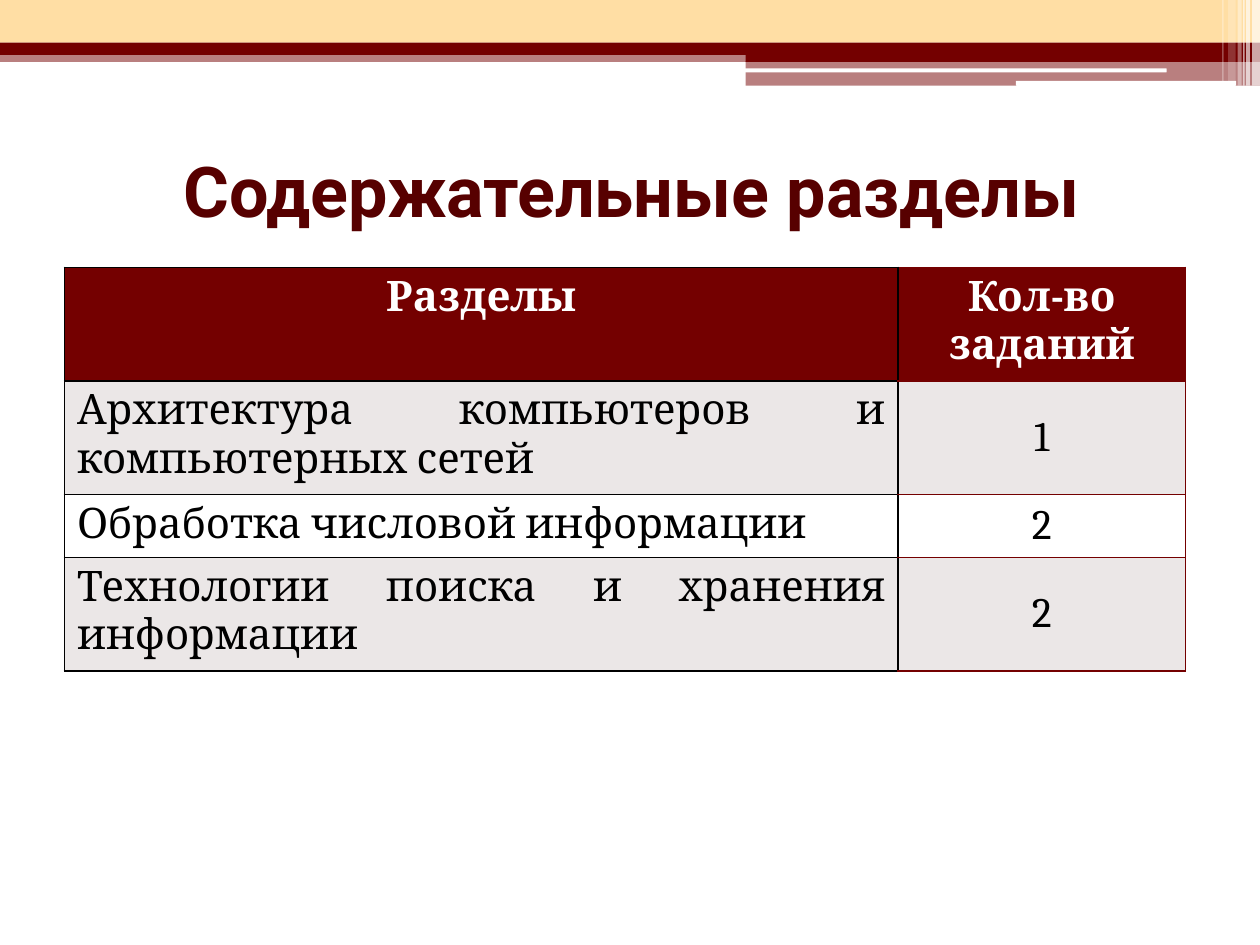
import lxml.etree
import pptx
import pptx.dml.color
import pptx.enum.shapes
import pptx.enum.text
import pptx.oxml.ns
import pptx.util

Cm = pptx.util.Cm
Pt = pptx.util.Pt
qn = pptx.oxml.ns.qn
ALIGN = pptx.enum.text.PP_ALIGN
ANCHOR = pptx.enum.text.MSO_ANCHOR
SHAPE = pptx.enum.shapes.MSO_SHAPE


def paint(fill, color, opacity=100):
    fill.solid()
    fill.fore_color.rgb = pptx.dml.color.RGBColor.from_string(color)
    if opacity < 100:
        node = fill._xPr.find(qn("a:solidFill"))[0]
        lxml.etree.SubElement(node, qn("a:alpha"), val=str(opacity * 1000))


def set_font(paragraph, name, size, color, bold, alignment):
    paragraph.alignment = alignment
    paragraph.font.name = name
    paragraph.font.size = Pt(size)
    paragraph.font.bold = bold
    paint(paragraph.font.fill, color)


presentation = pptx.Presentation()
presentation.slide_width = Cm(25.4)
presentation.slide_height = Cm(19.05)
slide = presentation.slides.add_slide(presentation.slide_layouts[6])

header_bands = [
    (SHAPE.RECTANGLE, 0, 1.02, 25.4, 0.23, "740000", 50),
    (SHAPE.RECTANGLE, 0, 0, 25.4, 0.86, "FFDEA4", 100),
    (SHAPE.RECTANGLE, 0, 0.86, 25.4, 0.25, "740000", 100),
    (SHAPE.RECTANGLE, 15.03, 1, 10.37, 0.25, "740000", 100),
    (SHAPE.RECTANGLE, 15.03, 1.23, 10.37, 0.5, "740000", 50),
    (SHAPE.ROUNDED_RECTANGLE, 15.01, 1.38, 8.51, 0.08, "FFFFFF", 100),
    (SHAPE.ROUNDED_RECTANGLE, 20.48, 1.63, 4.44, 0.1, "FFFFFF", 100),
]
stripes = [
    (25.24, 0.16, 1.73, 65),
    (25.12, 0.08, 1.73, 65),
    (25.06, 0.03, 1.73, 60),
    (24.95, 0.08, 1.73, 40),
    (24.76, 0.15, 1.63, 20),
    (24.64, 0.03, 1.63, 30),
]
for left, width, height, opacity in stripes:
    header_bands.append((SHAPE.RECTANGLE, left, 0, width, height, "FFFFFF", opacity))

for kind, left, top, width, height, color, opacity in header_bands:
    shape = slide.shapes.add_shape(kind, Cm(left), Cm(top), Cm(width), Cm(height))
    shape.shadow.inherit = False
    shape.line.fill.background()
    paint(shape.fill, color, opacity)

title = slide.shapes.add_textbox(Cm(1.3), Cm(2.34), Cm(22.86), Cm(2.97))
title.text_frame.word_wrap = True
title.text_frame.vertical_anchor = ANCHOR.MIDDLE
title.text_frame.text = "Содержательные разделы"
set_font(title.text_frame.paragraphs[0], "Roboto", 40, "570000", True, ALIGN.CENTER)

rows = [
    ("Разделы", "Кол-во\nзаданий"),
    ("Архитектура компьютеров и компьютерных сетей", "1"),
    ("Обработка числовой информации", "2"),
    ("Технологии поиска и хранения информации", "2"),
]
column_widths = [16.8, 5.8]
row_heights = [2.21, 2.21, 1.22, 2.21]
table = slide.shapes.add_table(
    len(rows), 2, Cm(1.3), Cm(5.39), Cm(sum(column_widths)), Cm(sum(row_heights))
).table
for column, width in zip(table.columns, column_widths):
    column.width = Cm(width)

for row_index, texts in enumerate(rows):
    table.rows[row_index].height = Cm(row_heights[row_index])
    is_header = row_index == 0
    for column_index, text in enumerate(texts):
        cell = table.cell(row_index, column_index)
        cell.text = text
        is_count = column_index == 1
        centred = is_header or is_count
        cell.vertical_anchor = ANCHOR.MIDDLE if is_count and not is_header else ANCHOR.TOP
        for paragraph in cell.text_frame.paragraphs:
            set_font(
                paragraph,
                "Cambria",
                24,
                "FFFFFF" if is_header else "000000",
                is_header,
                ALIGN.CENTER if centred else ALIGN.JUSTIFY,
            )
        properties = cell._tc.get_or_add_tcPr()
        for side in ("L", "R", "T", "B"):
            color = "740000" if is_count and side != "L" else "000000"
            border = lxml.etree.SubElement(properties, qn(f"a:ln{side}"), w=str(Pt(1)))
            border_fill = lxml.etree.SubElement(border, qn("a:solidFill"))
            lxml.etree.SubElement(border_fill, qn("a:srgbClr"), val=color)
        paint(cell.fill, "740000" if is_header else "EBE7E7" if row_index % 2 else "FFFFFF")

presentation.save("out.pptx")
